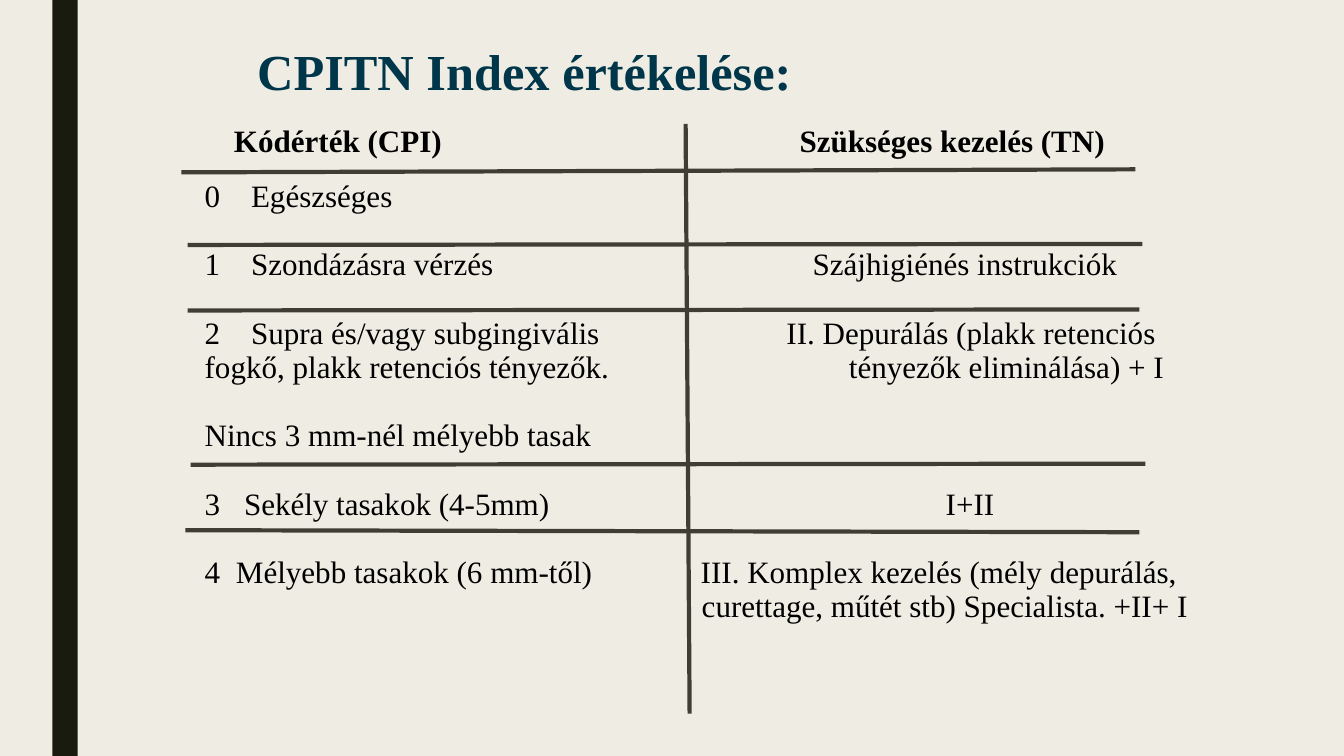
from lxml import etree
from pptx import Presentation
from pptx.dml.color import RGBColor
from pptx.enum.shapes import MSO_CONNECTOR, MSO_SHAPE
from pptx.enum.text import MSO_ANCHOR, MSO_AUTO_SIZE, PP_ALIGN
from pptx.oxml.ns import qn
from pptx.util import Inches, Pt

STRAIGHT = MSO_CONNECTOR.STRAIGHT
RECTANGLE = MSO_SHAPE.RECTANGLE
TOP = MSO_ANCHOR.TOP
NO_AUTOFIT = MSO_AUTO_SIZE.NONE
LEFT = PP_ALIGN.LEFT

BACKGROUND = RGBColor(0xEF, 0xED, 0xE3)
BAR = RGBColor(0x19, 0x1B, 0x0E)
TITLE = RGBColor(0x00, 0x36, 0x4A)
INK = RGBColor(0x00, 0x00, 0x00)
RULE = RGBColor(0x40, 0x3D, 0x34)
FONT = "Times New Roman"
LINE_PITCH = 24.4

HEADING = "CPITN Index értékelése:"
# Text, left indent in inches, space before in lines
CODES = [
    ("Kódérték (CPI)", 0.29, 0),
    ("0\tEgészséges", 0.46, 0.6),
    ("1\tSzondázásra vérzés", 0.46, 1),
    ("2\tSupra és/vagy subgingivális", 0.46, 1),
    ("fogkő, plakk retenciós tényezők.", 0, 0),
    ("Nincs 3 mm-nél mélyebb tasak", 0, 1),
    ("3\tSekély tasakok (4-5mm)", 0.39, 1),
    ("4\tMélyebb tasakok (6 mm-től)", 0.31, 1),
]
TREATMENTS = [
    ("Szükséges kezelés (TN)", 0.98, 0),
    ("Szájhigiénés instrukciók", 1.11, 2.6),
    ("II. Depurálás (plakk retenciós", 0.85, 1),
    ("tényezők eliminálása) + I", 1.47, 0),
    ("I+II", 2.43, 3),
    ("III. Komplex kezelés (mély depurálás,", 0, 1),
    ("curettage, műtét stb) Specialista. +II+ I", 0.01, 0),
]
# Start x, start y, end x, end y
RULES = [
    (1.8, 1.71, 11.26, 1.68),
    (6.8, 1.23, 6.84, 7.08),
    (1.86, 2.43, 11.33, 2.42),
    (1.86, 3.08, 11.3, 3.07),
    (1.89, 4.61, 11.36, 4.6),
    (1.84, 5.26, 11.3, 5.28),
]


def place(placeholder, left, top, width, height, margin_top):
    placeholder.left, placeholder.top = Inches(left), Inches(top)
    placeholder.width, placeholder.height = Inches(width), Inches(height)
    frame = placeholder.text_frame
    frame.word_wrap = True
    frame.auto_size = NO_AUTOFIT
    frame.vertical_anchor = TOP
    frame.margin_top = Inches(margin_top)
    return frame


def set_font(paragraph, size, color, bold):
    font = paragraph.font
    font.name, font.size, font.bold = FONT, Pt(size), bold
    font.color.rgb = color


def set_indent(paragraph, indent):
    """Remove the bullet and indent; a numbered line hangs its number."""
    hanging = indent if "\t" in paragraph.text else 0
    properties = paragraph._p.get_or_add_pPr()
    properties.set("marL", str(Inches(indent)))
    properties.set("indent", str(Inches(-hanging)))
    etree.SubElement(properties, qn("a:buNone"))


def fill_column(frame, rows):
    frame.text = "\n".join(text for text, _, _ in rows)
    for index, (paragraph, row) in enumerate(zip(frame.paragraphs, rows)):
        _, indent, gap = row
        paragraph.alignment = LEFT
        paragraph.line_spacing = Pt(LINE_PITCH)
        paragraph.space_before = Pt(gap * LINE_PITCH)
        paragraph.space_after = Pt(0)
        set_indent(paragraph, indent)
        set_font(paragraph, 22.2, INK, index == 0)


def add_rule(slide, *ends):
    rule = slide.shapes.add_connector(STRAIGHT, *map(Inches, ends))
    rule.line.color.rgb = RULE
    rule.line.width = Pt(3)
    etree.SubElement(rule._element.spPr, qn("a:effectLst"))


def main():
    deck = Presentation()
    deck.slide_width, deck.slide_height = Inches(13.33), Inches(7.5)
    slide = deck.slides.add_slide(deck.slide_layouts[3])
    slide.background.fill.solid()
    slide.background.fill.fore_color.rgb = BACKGROUND

    bar = slide.shapes.add_shape(
        RECTANGLE, Inches(0.52), 0, Inches(0.25), deck.slide_height)
    bar.shadow.inherit = False
    bar.fill.solid()
    bar.fill.fore_color.rgb = BAR
    bar.line.fill.background()

    title = place(slide.shapes.title, 2.45, 0.42, 8.44, 0.76, 0.05)
    title.text = HEADING
    title.paragraphs[0].alignment = LEFT
    title.paragraphs[0].line_spacing = 0.89
    set_font(title.paragraphs[0], 36, TITLE, True)

    codes = place(slide.placeholders[1], 1.93, 1.21, 4.85, 5.38, 0.03)
    fill_column(codes, CODES)
    treatments = place(slide.placeholders[2], 6.85, 1.21, 5.61, 5.38, 0.03)
    fill_column(treatments, TREATMENTS)

    for ends in RULES:
        add_rule(slide, *ends)
    deck.save("out.pptx")


if __name__ == "__main__":
    main()
